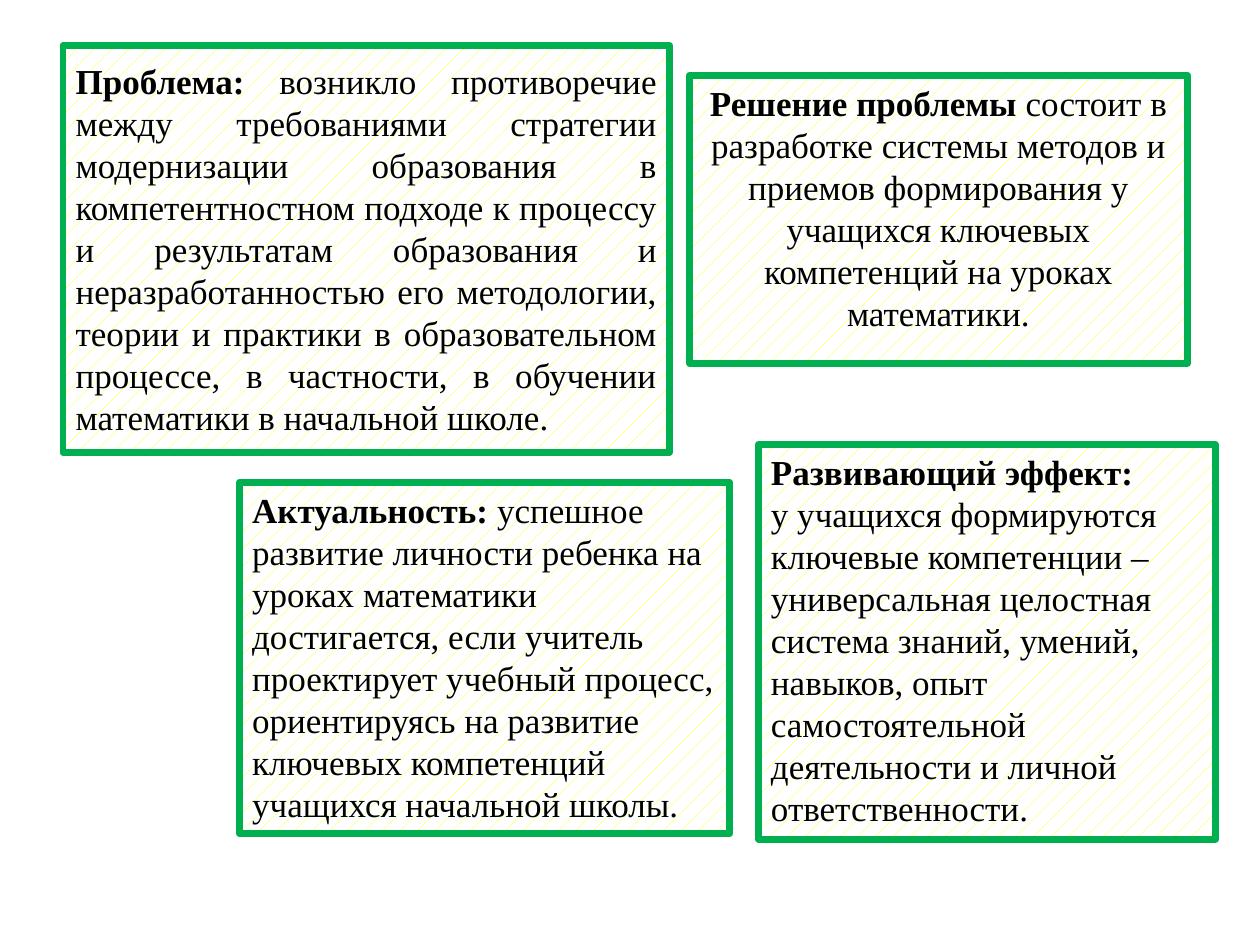
from pptx import Presentation
from pptx.dml.color import RGBColor
from pptx.enum.dml import MSO_PATTERN
from pptx.enum.text import MSO_ANCHOR, MSO_AUTO_SIZE, PP_ALIGN
from pptx.util import Pt

DOTS = MSO_PATTERN.PERCENT_5
TOP, MID = MSO_ANCHOR.TOP, MSO_ANCHOR.MIDDLE
LEFT, CENTER, FULL = PP_ALIGN.LEFT, PP_ALIGN.CENTER, PP_ALIGN.JUSTIFY
NONE, GROW = MSO_AUTO_SIZE.NONE, MSO_AUTO_SIZE.SHAPE_TO_FIT_TEXT

PANELS = [
    dict(at=(36, 26, 346.5, 232.5), align=FULL, anchor=MID, fit=NONE, before=0, paras=[
        [("Проблема: ", True),
         ("возникло противоречие между требованиями стратегии модернизации "
          "образования в компетентностном подходе к процессу и результатам "
          "образования и неразработанностью его методологии, теории и практики "
          "в образовательном процессе, в частности, в обучении математики "
          "в начальной школе.", False)]]),
    dict(at=(394, 43, 284.5, 164.5), align=CENTER, anchor=TOP, fit=NONE, before=0, paras=[
        [("Решение проблемы ", True),
         ("состоит в разработке системы методов и приемов формирования "
          "у учащихся ключевых компетенций на уроках математики.", False)]]),
    dict(at=(137, 275.5, 280, 201), align=LEFT, anchor=TOP, fit=GROW, before=0, paras=[
        [("Актуальность: ", True),
         ("успешное развитие личности ребенка на уроках математики достигается, "
          "если учитель проектирует учебный процесс, ориентируясь на развитие "
          "ключевых компетенций учащихся начальной школы.", False)]]),
    dict(at=(433.5, 254, 261, 225.5), align=LEFT, anchor=TOP, fit=GROW, before=0, paras=[
        [("Развивающий эффект:", True)],
        [("у учащихся формируются ключевые компетенции – универсальная целостная "
          "система знаний, умений, навыков, опыт самостоятельной деятельности "
          "и личной ответственности.", False)]]),
]
FONT = dict(name="Times New Roman", size=Pt(20))


def paint(color, code):
    color.rgb = RGBColor.from_string(code)


def assign(thing, values):
    for key, value in values.items():
        setattr(thing, key, value)


def frame(shape):
    shape.fill.patterned()
    shape.fill.pattern = DOTS
    paint(shape.fill.fore_color, "FFFF00")
    paint(shape.fill.back_color, "FFFFFF")
    paint(shape.line.color, "00B050")
    shape.line.width = Pt(4)


def write(shape, panel):
    text = shape.text_frame
    assign(text, dict(word_wrap=True, auto_size=panel["fit"],
                      vertical_anchor=panel["anchor"]))
    for i, parts in enumerate(panel["paras"]):
        para = text.add_paragraph() if i else text.paragraphs[0]
        assign(para, dict(alignment=panel["align"], space_before=Pt(panel["before"])))
        for words, bold in parts:
            run = para.add_run()
            run.text = words
            assign(run.font, FONT | dict(bold=bold))
            paint(run.font.color, "000000")


def main():
    deck = Presentation()
    assign(deck, dict(slide_width=Pt(720), slide_height=Pt(540)))
    slide = deck.slides.add_slide(deck.slide_layouts[5])
    for i, panel in enumerate(PANELS):
        box = [Pt(n) for n in panel["at"]]
        shape = slide.shapes.add_textbox(*box) if i else slide.shapes.title
        assign(shape, dict(zip(("left", "top", "width", "height"), box)))
        frame(shape)
        write(shape, panel)
    deck.save("out.pptx")


if __name__ == "__main__":
    main()
